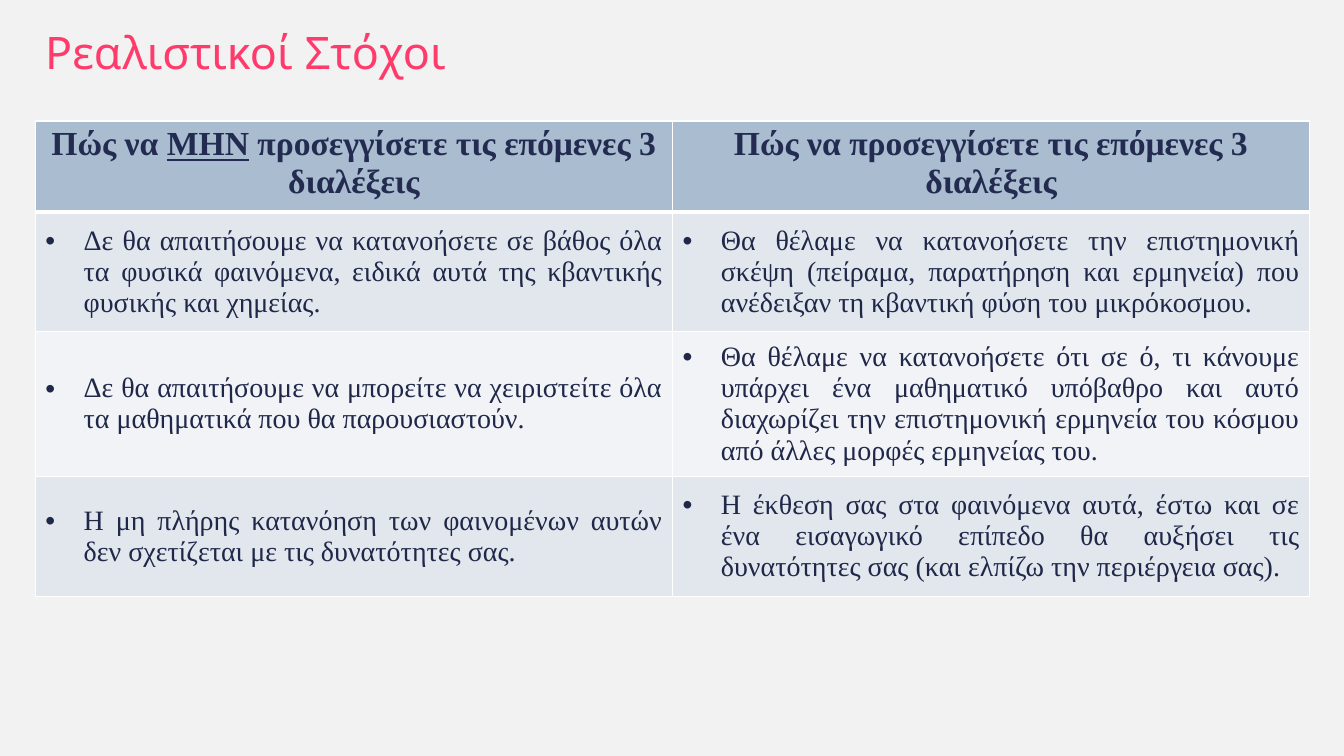
from lxml.etree import SubElement
from pptx import Presentation
from pptx.dml.color import RGBColor
from pptx.enum.text import MSO_ANCHOR, PP_ALIGN
from pptx.oxml.ns import qn
from pptx.util import Inches, Pt


def paint(color, value):
    color.rgb = RGBColor.from_string(value)


def write(para, text, color, format_values):
    span = para.add_run()
    span.text = text
    paint(span.font.color, color)
    for name, value in format_values.items():
        setattr(span.font, name, value)


deck = Presentation()
deck.slide_width, deck.slide_height = Inches(13.33), Inches(7.5)
page = deck.slides.add_slide(deck.slide_layouts[6])
page.background.fill.solid()
paint(page.background.fill.fore_color, "F2F2F2")

left = Inches(0.35)
title = page.shapes.add_textbox(left, Inches(0.17), Inches(11.5), Inches(0.75)).text_frame
title.word_wrap = True
title.vertical_anchor = MSO_ANCHOR.MIDDLE
title.paragraphs[0].line_spacing = 0.9
write(title.paragraphs[0], "Ρεαλιστικοί Στόχοι", "FF3B6B", {"name": "Quicksand", "size": Pt(32)})

header = [
    [("Πώς να ", False), ("ΜΗΝ", True), (" προσεγγίσετε τις επόμενες 3 διαλέξεις", False)],
    [("Πώς να προσεγγίσετε τις επόμενες 3 διαλέξεις", False)],
]
goals = [
    ("Δε θα απαιτήσουμε να κατανοήσετε σε βάθος όλα τα φυσικά φαινόμενα, ειδικά αυτά της κβαντικής φυσικής και χημείας.",
     "Θα θέλαμε να κατανοήσετε την επιστημονική σκέψη (πείραμα, παρατήρηση και ερμηνεία) που ανέδειξαν τη κβαντική φύση του μικρόκοσμου."),
    ("Δε θα απαιτήσουμε να μπορείτε να χειριστείτε όλα τα μαθηματικά που θα παρουσιαστούν.",
     "Θα θέλαμε να κατανοήσετε ότι σε ό, τι κάνουμε υπάρχει ένα μαθηματικό υπόβαθρο και αυτό διαχωρίζει την επιστημονική ερμηνεία του κόσμου από άλλες μορφές ερμηνείας του."),
    ("Η μη πλήρης κατανόηση των φαινομένων αυτών δεν σχετίζεται με τις δυνατότητες σας.",
     "Η έκθεση σας στα φαινόμενα αυτά, έστω και σε ένα εισαγωγικό επίπεδο θα αυξήσει τις δυνατότητες σας (και ελπίζω την περιέργεια σας)."),
]
rows = [header] + [[[(text, False)] for text in pair] for pair in goals]
row_heights = [0.83, 1.19, 1.33, 1.19]
row_fills = ["A9BCD0", "E2E7EE", "F1F3F7", "E2E7EE"]

table = page.shapes.add_table(
    len(rows), 2, left, Inches(1.2), Inches(12.64), Inches(sum(row_heights))
).table
table.horz_banding = False

for row_index, row in enumerate(rows):
    is_header = row_index == 0
    table.rows[row_index].height = Inches(row_heights[row_index])
    for column_index, spans in enumerate(row):
        cell = table.cell(row_index, column_index)
        cell.vertical_anchor = MSO_ANCHOR.TOP if is_header else MSO_ANCHOR.MIDDLE

        for side in ("lnL", "lnR", "lnT", "lnB"):
            thick = (row_index, side) in ((0, "lnB"), (1, "lnT"))
            border = SubElement(cell._tc.get_or_add_tcPr(), qn(f"a:{side}"), w=str(Pt(3 if thick else 1)))
            SubElement(SubElement(border, qn("a:solidFill")), qn("a:srgbClr"), val="FFFFFF")
        cell.fill.solid()
        paint(cell.fill.fore_color, row_fills[row_index])

        para = cell.text_frame.paragraphs[0]
        para.alignment = PP_ALIGN.CENTER if is_header else PP_ALIGN.JUSTIFY
        if not is_header:
            indent = Inches(0.38)
            properties = para._p.get_or_add_pPr()
            properties.set("marL", str(indent))
            properties.set("indent", str(-indent))
            SubElement(properties, qn("a:buFont"), typeface="Arial")
            SubElement(properties, qn("a:buChar"), char="•")
        for text, underlined in spans:
            write(para, text, "232C50" if is_header else "202849", {
                "name": "Times New Roman",
                "size": Pt(24 if is_header else 20),
                "bold": is_header,
                "underline": underlined,
            })

deck.save("out.pptx")
